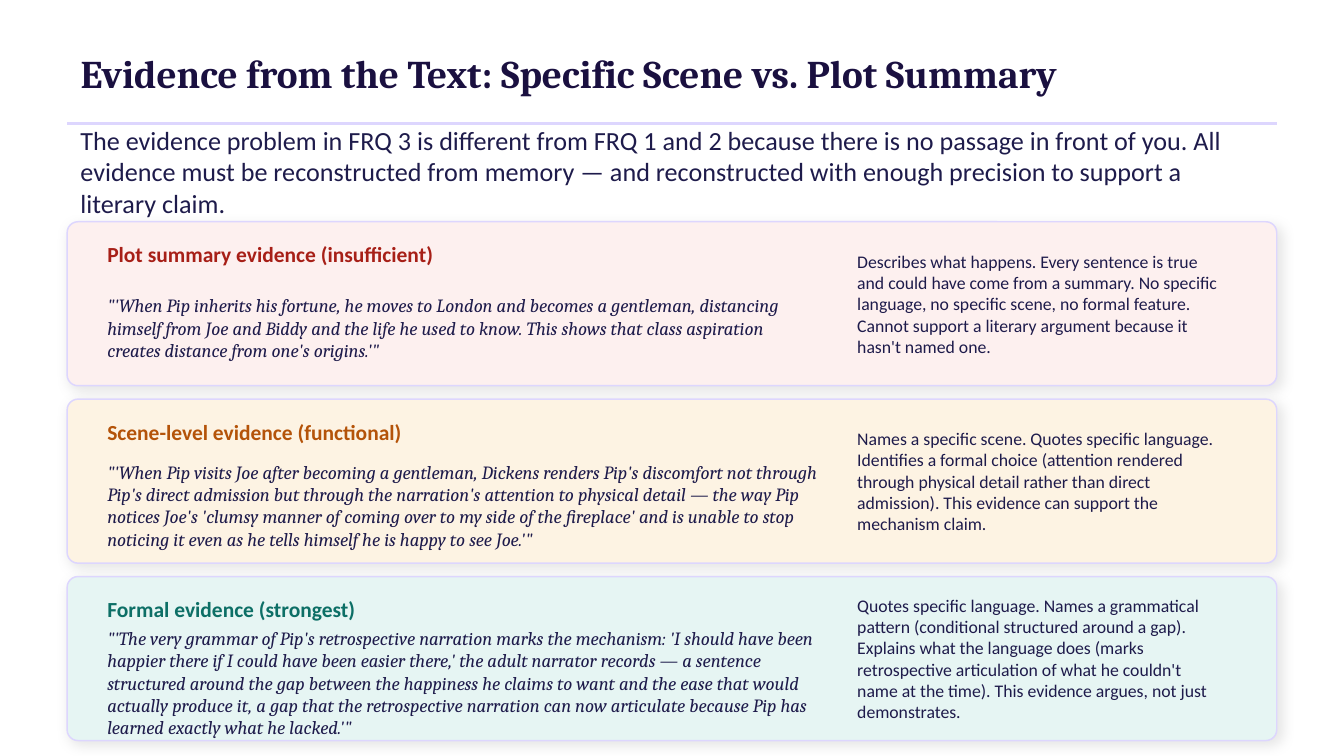
from lxml.etree import SubElement
from pptx import Presentation
from pptx.dml.color import RGBColor
from pptx.enum.shapes import MSO_CONNECTOR as Connector, MSO_SHAPE as Shape
from pptx.enum.text import MSO_ANCHOR as Anchor, MSO_AUTO_SIZE as AutoSize, PP_ALIGN as Align
from pptx.oxml.ns import qn
from pptx.util import Pt

WHITE = RGBColor(0xFF, 0xFF, 0xFF)
TITLE_INK = RGBColor(0x1A, 0x10, 0x40)
BODY_INK = RGBColor(0x1E, 0x1B, 0x4B)
LAVENDER = RGBColor(0xDD, 0xD6, 0xFE)
RED = RGBColor(0xA7, 0x1F, 0x17)
PALE_RED = RGBColor(0xFD, 0xF0, 0xEF)
AMBER = RGBColor(0xB4, 0x53, 0x09)
PALE_AMBER = RGBColor(0xFD, 0xF3, 0xE3)
TEAL = RGBColor(0x0D, 0x6F, 0x66)
PALE_TEAL = RGBColor(0xE6, 0xF5, 0xF3)

SERIF = "Cambria"
SANS = "Calibri"

TITLE = "Evidence from the Text: Specific Scene vs. Plot Summary"
INTRO = (
    "The evidence problem in FRQ 3 is different from FRQ 1 and 2 because there is "
    "no passage in front of you. All evidence must be reconstructed from memory — "
    "and reconstructed with enough precision to support a literary claim."
)
CARDS = [
    (
        "Plot summary evidence (insufficient)", RED, PALE_RED,
        "\"'When Pip inherits his fortune, he moves to London and becomes a gentleman, "
        "distancing himself from Joe and Biddy and the life he used to know. This shows "
        "that class aspiration creates distance from one's origins.'\"",
        "Describes what happens. Every sentence is true and could have come from a "
        "summary. No specific language, no specific scene, no formal feature. Cannot "
        "support a literary argument because it hasn't named one.",
    ),
    (
        "Scene-level evidence (functional)", AMBER, PALE_AMBER,
        "\"'When Pip visits Joe after becoming a gentleman, Dickens renders Pip's "
        "discomfort not through Pip's direct admission but through the narration's "
        "attention to physical detail — the way Pip notices Joe's 'clumsy manner of "
        "coming over to my side of the fireplace' and is unable to stop noticing it "
        "even as he tells himself he is happy to see Joe.'\"",
        "Names a specific scene. Quotes specific language. Identifies a formal choice "
        "(attention rendered through physical detail rather than direct admission). "
        "This evidence can support the mechanism claim.",
    ),
    (
        "Formal evidence (strongest)", TEAL, PALE_TEAL,
        "\"'The very grammar of Pip's retrospective narration marks the mechanism: "
        "'I should have been happier there if I could have been easier there,' the "
        "adult narrator records — a sentence structured around the gap between the "
        "happiness he claims to want and the ease that would actually produce it, a gap "
        "that the retrospective narration can now articulate because Pip has learned "
        "exactly what he lacked.'\"",
        "Quotes specific language. Names a grammatical pattern (conditional structured "
        "around a gap). Explains what the language does (marks retrospective "
        "articulation of what he couldn't name at the time). This evidence argues, "
        "not just demonstrates.",
    ),
]


def write_text(box, text, size, font=SANS, color=BODY_INK, bold=False, italic=False):
    """Fill a box with one left-aligned, vertically centred paragraph."""
    frame = box.text_frame
    frame.word_wrap = True
    frame.auto_size = AutoSize.NONE
    frame.vertical_anchor = Anchor.MIDDLE
    para = frame.paragraphs[0]
    para.alignment = Align.LEFT
    span = para.add_run()
    span.text = text
    span.font.name = font
    span.font.size = Pt(size)
    span.font.color.rgb = color
    span.font.bold = bold
    span.font.italic = italic


def add_text(page, left, top, width, height, text, **style):
    """Add a text box holding formatted text."""
    box = page.shapes.add_textbox(Pt(left), Pt(top), Pt(width), Pt(height))
    write_text(box, text, **style)


def add_soft_shadow(shape):
    """Give a shape a faint shadow towards its lower right."""
    shape.shadow.inherit = False
    effects = shape._element.spPr.find(qn("a:effectLst"))
    shadow = SubElement(
        effects, qn("a:outerShdw"), blurRad=str(Pt(7)), dist=str(Pt(2)),
        dir=str(45 * 60000), algn="bl", rotWithShape="0",
    )
    color = SubElement(shadow, qn("a:srgbClr"), val="000000")
    SubElement(color, qn("a:alpha"), val="9000")


def add_header(page, left, top, width):
    """Place the title, the rule below it and the introduction."""
    title = page.shapes.title
    title.left, title.top = Pt(left), Pt(top)
    title.width, title.height = Pt(width), Pt(46.8)
    write_text(title, TITLE, size=21, font=SERIF, color=TITLE_INK, bold=True)

    rule_top = Pt(top + 50.4)
    rule = page.shapes.add_connector(
        Connector.STRAIGHT, Pt(left), rule_top, Pt(left + width), rule_top
    )
    rule.line.color.rgb = LAVENDER
    rule.line.width = Pt(1.2)
    SubElement(rule._element.spPr, qn("a:effectLst"))

    add_text(page, left, top + 56.16, width, 39.6, INTRO, size=14)


def add_card(page, left, top, width, height, heading, accent, fill, quote, comment):
    """Place one evidence card: heading and quote at left, comment at right."""
    card = page.shapes.add_shape(
        Shape.ROUNDED_RECTANGLE, Pt(left), Pt(top), Pt(width), Pt(height)
    )
    card.adjustments[0] = 0.066
    card.fill.solid()
    card.fill.fore_color.rgb = fill
    card.line.color.rgb = LAVENDER
    card.line.width = Pt(0.8)
    add_soft_shadow(card)

    inner_left, inner_top = left + 14.4, top + 5.76
    add_text(page, inner_left, inner_top, width - 28.8, 23.04, heading,
             size=11.5, color=accent, bold=True)
    add_text(page, inner_left, top + 30.24, 396, 53.28, quote,
             size=10, font=SERIF, italic=True)
    add_text(page, left + 416.16, inner_top, 210.24, height - 11.52, comment, size=9.5)


def main():
    """Build and save the evidence slide."""
    deck = Presentation()
    deck.slide_width, deck.slide_height = Pt(720), Pt(405)
    page = deck.slides.add_slide(deck.slide_layouts[5])
    page.background.fill.solid()
    page.background.fill.fore_color.rgb = WHITE

    left, width = 36, 648
    add_header(page, left, 15.84, width)
    card_height, gap = 87.84, 7.2
    for index, card in enumerate(CARDS):
        top = 118.8 + index * (card_height + gap)
        add_card(page, left, top, width, card_height, *card)
    deck.save("out.pptx")


if __name__ == "__main__":
    main()
